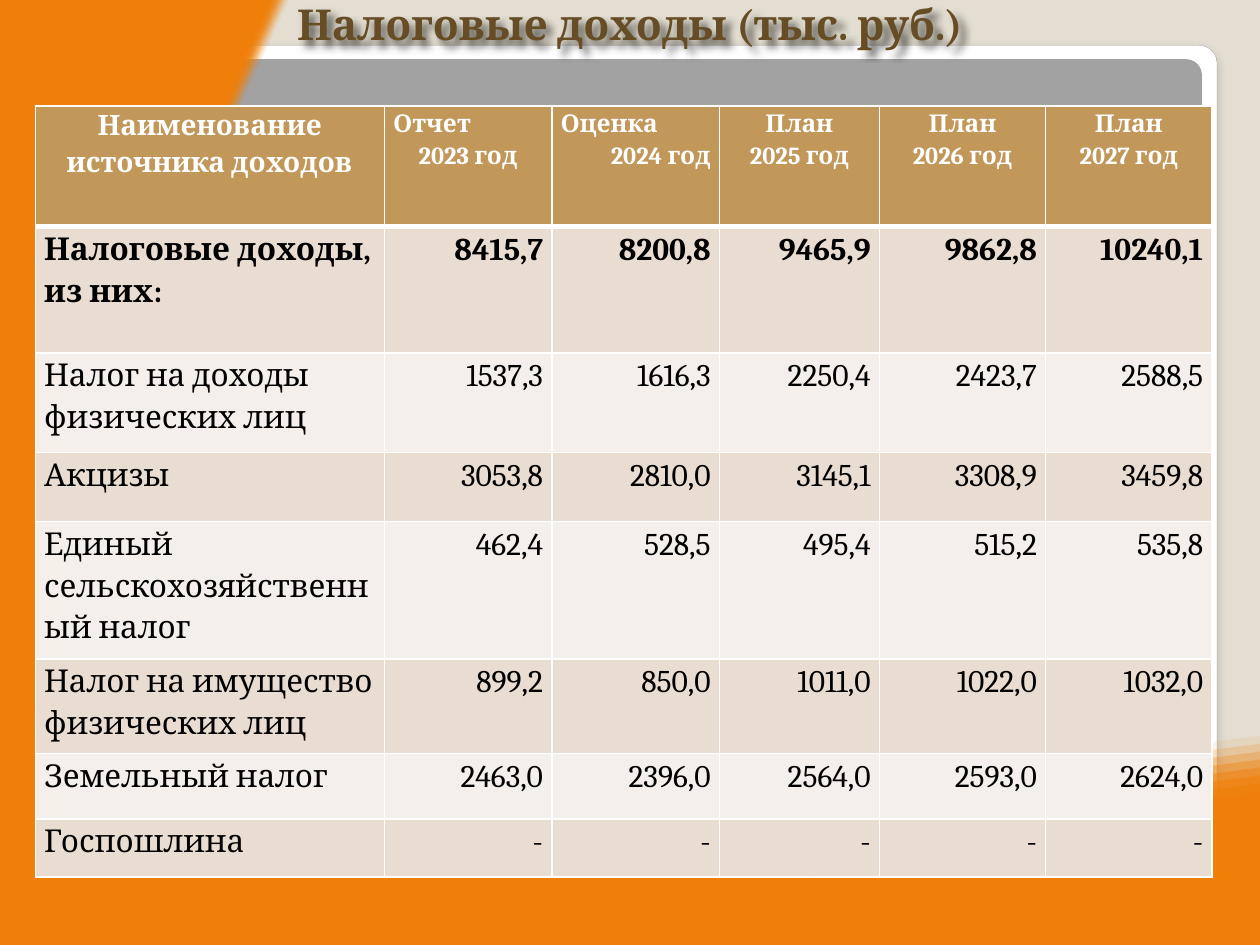
from dataclasses import dataclass

from lxml import etree
from pptx import Presentation
from pptx.dml.color import RGBColor
from pptx.enum.shapes import MSO_SHAPE
from pptx.enum.text import MSO_ANCHOR, PP_ALIGN
from pptx.oxml import parse_xml
from pptx.oxml.ns import nsdecls, qn
from pptx.util import Inches, Pt

ROUNDED = MSO_SHAPE.ROUNDED_RECTANGLE
BOTTOM = MSO_ANCHOR.BOTTOM
LEFT, CENTER, RIGHT = PP_ALIGN.LEFT, PP_ALIGN.CENTER, PP_ALIGN.RIGHT


@dataclass(frozen=True)
class Theme:
    font: str = "Cambria"
    backdrop: str = "E3DED1"
    orange: str = "F07F09"
    frame_line: str = "A4A4A4"
    frame_stops: tuple = ((0, "FFFFFF"), (98, "FFFFFF"), (99, "F7F7F7"), (100, "DADADA"))
    panel_stops: tuple = ((0, "FFFFFF"), (55, "E1E1E1"), (100, "A2A2A2"))
    title: str = "674D26"
    header: str = "C19859"
    bands: tuple = ("E9DDD1", "F4EFEA")
    white: str = "FFFFFF"
    black: str = "000000"
    title_size: float = 24.3
    name_size: int = 16
    year_size: int = 14
    body_size: int = 18


THEME = Theme()
W, H = 10, 7.5
BAND_COUNT = 11

# Bezier chains from the top edge to the right edge: anchor, control, control, anchor ...
INNER_EDGE = [(1.99, 0), (1.99, 0), (1.8, 0.41), (1.47, 1.15), (-1.21, 7.12),
              (0.8, 7.55), (4.91, 7.14), (8.06, 6.82), (10, 6.56), (10, 6.56)]
WIDE_EDGE = [(2.29, 0), (2.29, 0.01), (2.11, 0.4), (1.8, 1.09), (-0.55, 6.32),
             (1.21, 6.78), (5.18, 6.38), (8.14, 6.09), (9.98, 5.84), (10, 5.84)]
NARROW_EDGE = [(2.08, 0), (2.03, 0.11), (1.86, 0.52), (1.58, 1.14), (-1.07, 7.03),
               (0.92, 7.45), (4.98, 7.04), (7.86, 6.75), (9.74, 6.51), (10, 6.47)]

COLUMNS = [2.77, 1.33, 1.33, 1.27, 1.32, 1.32]
ROWS = [0.96, 1, 0.79, 0.55, 1.09, 0.75, 0.52, 0.46]
HEADER = [
    [("Наименование источника доходов", CENTER)],
    [("Отчет", LEFT), ("2023 год", CENTER)],
    [("Оценка", LEFT), ("2024 год", RIGHT)],
] + [[("План", CENTER), (f"{year} год", CENTER)] for year in (2025, 2026, 2027)]
INCOME = [
    ("Налоговые доходы,\nиз них:", "8415,7", "8200,8", "9465,9", "9862,8", "10240,1"),
    ("Налог на доходы физических лиц", "1537,3", "1616,3", "2250,4", "2423,7", "2588,5"),
    ("Акцизы", "3053,8", "2810,0", "3145,1", "3308,9", "3459,8"),
    ("Единый сельскохозяйственный налог", "462,4", "528,5", "495,4", "515,2", "535,8"),
    ("Налог на имущество физических лиц", "899,2", "850,0", "1011,0", "1022,0", "1032,0"),
    ("Земельный налог", "2463,0", "2396,0", "2564,0", "2593,0", "2624,0"),
    ("Госпошлина", "-", "-", "-", "-", "-"),
]


def rgb(color):
    return RGBColor.from_string(color)


def style_paragraph(p, size, color, bold, align):
    p.alignment = align
    p.font.name, p.font.size, p.font.bold = THEME.font, Pt(size), bold
    p.font.color.rgb = rgb(color)


def set_shadow(sp, blur, distance, angle, alpha):
    """Give the shape a soft black shadow; blur and distance are in points."""
    sp.shadow.inherit = False
    effects = sp._element.spPr.find(qn("a:effectLst"))
    effects.append(parse_xml(
        f'<a:outerShdw {nsdecls("a")} blurRad="{Pt(blur)}" dist="{Pt(distance)}" '
        f'dir="{angle * 60000}" algn="tl" rotWithShape="0"><a:srgbClr val="{THEME.black}">'
        f'<a:alpha val="{alpha * 1000}"/></a:srgbClr></a:outerShdw>'))


def add_panel(s, box, stops, direction):
    """Add a rounded panel with a gradient of (percent, colour) stops."""
    sp = s.shapes.add_shape(ROUNDED, *map(Inches, box))
    sp.adjustments[0] = 0.021
    sp.shadow.inherit = False
    sp.line.fill.background()
    sp.fill.gradient()
    old = sp._element.spPr.find(qn("a:gradFill"))
    marks = "".join(f'<a:gs pos="{at * 1000}"><a:srgbClr val="{c}"/></a:gs>' for at, c in stops)
    new = parse_xml(f'<a:gradFill {nsdecls("a")} rotWithShape="1">'
                    f'<a:gsLst>{marks}</a:gsLst>{direction}</a:gradFill>')
    old.getparent().replace(old, new)
    return sp


def blend(start, end, t):
    return [(a + (c - a) * t, b + (d - b) * t) for (a, b), (c, d) in zip(start, end)]


def curves(chain):
    """Split a Bezier chain into steps of control, control, anchor."""
    return [chain[k:k + 3] for k in range(1, len(chain), 3)]


def add_wave(s, start, steps, alpha=100):
    """Draw a closed outline; a step is one point (line) or three (curve)."""
    builder = s.shapes.build_freeform(*map(Inches, start))
    builder.add_line_segments([tuple(map(Inches, step[-1])) for step in steps], close=True)
    sp = builder.convert_to_shape()
    for line, step in zip(list(sp._element.iter(qn("a:lnTo"))), steps):
        if len(step) == 3:
            line.tag = qn("a:cubicBezTo")
            for k, (x, y) in enumerate(step[:2]):
                pt = etree.Element(qn("a:pt"), x=str(Inches(x) - sp.left),
                                   y=str(Inches(y) - sp.top))
                line.insert(k, pt)
    sp.shadow.inherit = False
    sp.line.fill.background()
    sp.fill.solid()
    sp.fill.fore_color.rgb = rgb(THEME.orange)
    if alpha < 100:
        color = sp._element.spPr.find(qn("a:solidFill"))[0]
        etree.SubElement(color, qn("a:alpha")).set("val", str(alpha * 1000))


def add_waves(s):
    add_wave(s, INNER_EDGE[0], curves(INNER_EDGE) + [[(W, H)], [(0, H)], [(0, 0)]])
    way_back = [[INNER_EDGE[-1]]] + curves(INNER_EDGE[::-1])
    for k in range(BAND_COUNT):
        edge = blend(WIDE_EDGE, NARROW_EDGE, k / (BAND_COUNT - 1))
        add_wave(s, edge[0], curves(edge) + way_back, round(100 * (k + 1) / BAND_COUNT))


def add_title(s, text):
    sp = s.shapes.add_textbox(Inches(0.05 * W), 0, Inches(0.9 * W), Inches(0.39))
    tf = sp.text_frame
    tf.word_wrap = True
    tf.vertical_anchor = BOTTOM
    tf.margin_left = tf.margin_right = tf.margin_top = tf.margin_bottom = 0
    tf.text = text
    style_paragraph(tf.paragraphs[0], THEME.title_size, THEME.title, True, CENTER)
    set_shadow(sp, 4, 4, 45, 60)


def set_borders(cell, top=1, bottom=1):
    tc_pr = cell._tc.get_or_add_tcPr()
    for k, (side, width) in enumerate((("L", 1), ("R", 1), ("T", top), ("B", bottom))):
        tc_pr.insert(k, parse_xml(
            f'<a:ln{side} {nsdecls("a")} w="{Pt(width)}"><a:solidFill>'
            f'<a:srgbClr val="{THEME.white}"/></a:solidFill></a:ln{side}>'))


def fill_cell(cell, lines, size, color, bold, fill):
    """Write (text, alignment) lines into the cell."""
    cell.margin_left = cell.margin_right = Inches(0.07)
    cell.margin_top = cell.margin_bottom = 0
    cell.fill.solid()
    cell.fill.fore_color.rgb = rgb(fill)
    tf = cell.text_frame
    tf.text = "\n".join(text for text, _ in lines)
    for p, (_, align) in zip(tf.paragraphs, lines):
        p.line_spacing = 1.15
        style_paragraph(p, size, color, bold, align)


def add_income_table(s):
    frame = s.shapes.add_table(len(ROWS), len(COLUMNS), Inches(0.28), Inches(0.84),
                               Inches(sum(COLUMNS)), Inches(sum(ROWS)))
    table = frame.table
    table.first_row = table.horz_banding = False
    for column, width in zip(table.columns, COLUMNS):
        column.width = Inches(width)
    for row, height in zip(table.rows, ROWS):
        row.height = Inches(height)
    for c, lines in enumerate(HEADER):
        size = THEME.year_size if c else THEME.name_size
        fill_cell(table.cell(0, c), lines, size, THEME.white, True, THEME.header)
        set_borders(table.cell(0, c), bottom=3)
    for r, values in enumerate(INCOME, 1):
        for c, value in enumerate(values):
            lines = [(line, RIGHT if c else LEFT) for line in value.split("\n")]
            fill_cell(table.cell(r, c), lines, THEME.body_size, THEME.black,
                      r == 1, THEME.bands[(r - 1) % 2])
            set_borders(table.cell(r, c), top=3 if r == 1 else 1)


def main():
    prs = Presentation()
    prs.slide_width, prs.slide_height = Inches(W), Inches(H)
    s = prs.slides.add_slide(prs.slide_layouts[6])
    s.background.fill.solid()
    s.background.fill.fore_color.rgb = rgb(THEME.backdrop)

    frame = add_panel(s, (0.33, 0.36, 9.33, 6.78), THEME.frame_stops,
                      '<a:lin ang="5400000" scaled="0"/>')
    frame.line.color.rgb = rgb(THEME.frame_line)
    frame.line.width = Pt(0.16)
    set_shadow(frame, 6, 4, 90, 25)
    add_panel(s, (0.46, 0.47, 9.08, 6), THEME.panel_stops,
              '<a:path path="circle"><a:fillToRect l="50000" t="175000" '
              'r="50000" b="-75000"/></a:path>')
    add_waves(s)
    add_title(s, "Налоговые доходы (тыс. руб.)")
    add_income_table(s)
    prs.save("out.pptx")


if __name__ == "__main__":
    main()
